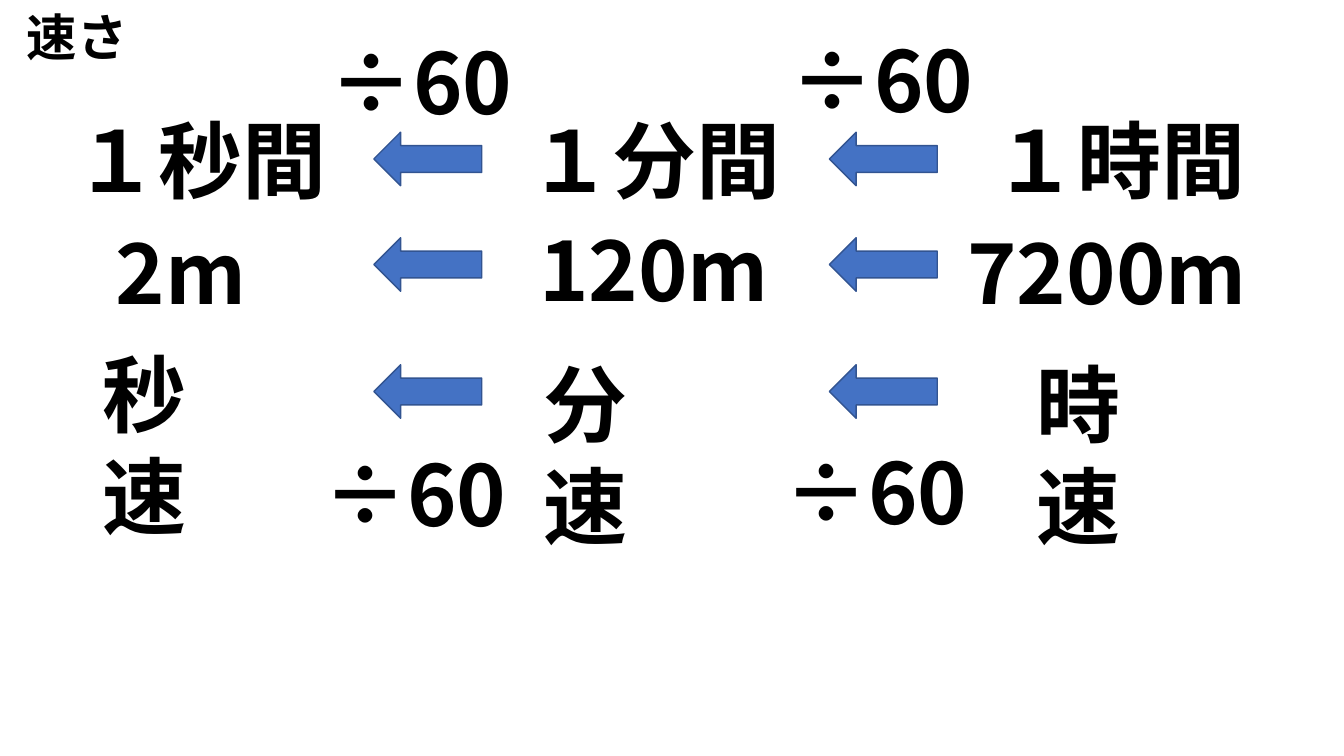
from lxml import etree
from pptx import Presentation
from pptx import util as u
from pptx.dml.color import RGBColor
from pptx.enum import shapes, text
from pptx.oxml.ns import qn

BLACK = RGBColor(0x00, 0x00, 0x00)
BLUE = RGBColor(0x44, 0x72, 0xC4)
DARK_BLUE = RGBColor(0x32, 0x54, 0x91)
FONT = "Noto Sans CJK JP"
LINE_HEIGHT = 2.82
ARROW_TOPS = (3.33, 5.99, 9.19)

COLUMNS = [
    ((1.63, 2.59), [("１秒間", 0, 0, 6.88), ("2m", 1.04, 2.82, 5.49),
                    ("秒速　", 0.71, 5.89, 6.12)]),
    ((13.06, 2.59), [("１分間", 0, 0, 7.19), ("120m", 0.28, 2.74, 6.32),
                     ("分速　", 0.4, 6.15, 6.12)]),
    ((24.13, 2.59), [("１時間", 0.66, 0, 7.19), ("7200m", 0, 2.82, 7.65),
                     ("時速　", 1.73, 6.15, 6.12)]),
]
STEPS = [((7.9, 0.61), 1.52), ((19.51, 0.56), 1.39)]


def place(sp, left, top, width, height):
    box = dict(left=left, top=top, width=width, height=height)
    for name, value in box.items():
        setattr(sp, name, u.Cm(value))


def write(sp, words, size):
    tf = sp.text_frame
    frame = dict(word_wrap=True, vertical_anchor=text.MSO_ANCHOR.TOP,
                 auto_size=text.MSO_AUTO_SIZE.NONE,
                 margin_left=u.Cm(0.25), margin_right=u.Cm(0.25),
                 margin_top=u.Cm(0.13), margin_bottom=u.Cm(0.13))
    for name, value in frame.items():
        setattr(tf, name, value)
    p = tf.paragraphs[0]
    paragraph = dict(alignment=text.PP_ALIGN.LEFT, line_spacing=u.Pt(size * 1.21),
                     space_before=u.Pt(0))
    for name, value in paragraph.items():
        setattr(p, name, value)
    r = p.add_run()
    r.text = words
    for name, value in dict(name=FONT, size=u.Pt(size), bold=True).items():
        setattr(r.font, name, value)
    r.font.color.rgb = BLACK
    etree.SubElement(r.font._element, qn("a:ea"), typeface=FONT)


def add_title(s, left, top, width, height):
    sp = s.shapes.title
    place(sp, left, top, width, height)
    write(sp, "速さ", 36)


def add_label(s, words, left, top, width):
    sp = s.shapes.add_textbox(*map(u.Cm, (left, top, width, LINE_HEIGHT)))
    write(sp, words, 60)


def add_column(s, left, top, labels):
    for words, dx, dy, width in labels:
        add_label(s, words, left + dx, top + dy, width)


def add_arrow(s, left, top):
    sp = s.shapes.add_shape(shapes.MSO_SHAPE.RIGHT_ARROW,
                            *map(u.Cm, (left, top, 2.72, 1.35)))
    sp.rotation = 180
    sp.shadow.inherit = False
    sp.fill.solid()
    sp.fill.fore_color.rgb = BLUE
    sp.line.color.rgb = DARK_BLUE
    sp.line.width = u.Pt(1)


def add_step(s, left, top, arrow_dx):
    for arrow_top in ARROW_TOPS:
        add_arrow(s, left + arrow_dx, arrow_top)
    for dx, dy in ((0.15, 0), (0, 10.39)):
        add_label(s, "÷60　", left + dx, top + dy, 5.28)


def main():
    prs = Presentation()
    prs.slide_width, prs.slide_height = u.Cm(33.87), u.Cm(19.05)
    s = prs.slides.add_slide(prs.slide_layouts[5])
    add_title(s, 0.43, 0, 4.45, 1.8)
    for (left, top), labels in COLUMNS:
        add_column(s, left, top, labels)
    for (left, top), arrow_dx in STEPS:
        add_step(s, left, top, arrow_dx)
    prs.save("out.pptx")


if __name__ == "__main__":
    main()
